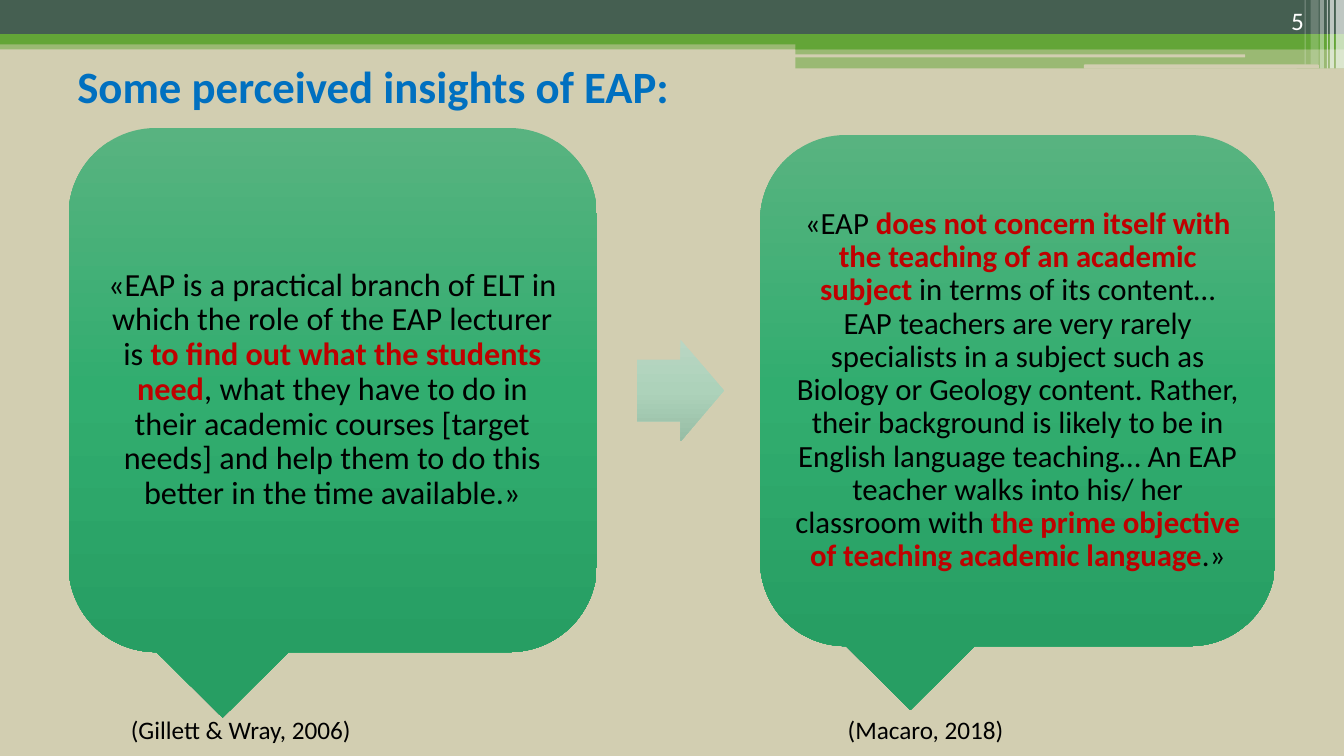
from copy import deepcopy
from dataclasses import dataclass

from lxml.etree import SubElement
from pptx import Presentation
from pptx.dml.color import RGBColor
from pptx.enum.shapes import MSO_SHAPE
from pptx.enum.text import MSO_ANCHOR, MSO_AUTO_SIZE, PP_ALIGN
from pptx.oxml.ns import qn
from pptx.util import Inches, Pt


@dataclass(frozen=True)
class Theme:
    font: str = "Calibri"
    sand: str = "D2CEB1"
    slate: str = "455F51"
    green: str = "63A537"
    white: str = "FFFFFF"
    blue: str = "0070C0"
    black: str = "000000"
    red: str = "C00000"
    callout: tuple = ("58B380", "31AD6F", "279E63")
    arrow: tuple = ("B9D6C3", "ADD2BA", "97BDA5")
    title_size: int = 32
    note_size: int = 18


@dataclass(frozen=True)
class Box:
    x: float
    y: float
    w: float
    h: float

    def share(self, x, y, w, h):
        return Box(self.x + self.w * x / 100, self.y + self.h * y / 100,
                   self.w * w / 100, self.h * h / 100)

    def emu(self):
        return [Inches(v) for v in (self.x, self.y, self.w, self.h)]


T = Theme()
PAGE = Box(0, 0, 13.33, 7.5)


def style(r, size, color, bold=False):
    r.font.name = T.font
    r.font.size = Pt(size)
    r.font.bold = bold
    r.font.color.rgb = RGBColor.from_string(color)


def add_block(s, box, kind=MSO_SHAPE.RECTANGLE):
    sp = s.shapes.add_shape(kind, *box.emu())
    sp.shadow.inherit = False
    sp.line.fill.background()
    return sp


def fill_solid(sp, color, alpha=100):
    sp.fill.solid()
    sp.fill.fore_color.rgb = RGBColor.from_string(color)
    if alpha < 100:
        clr = sp.element.spPr.find(qn("a:solidFill")).find(qn("a:srgbClr"))
        SubElement(clr, qn("a:alpha")).set("val", str(alpha * 1000))


def fill_gradient(sp, colors):
    sp.fill.gradient()
    sp.fill.gradient_angle = 270
    stops = sp.element.spPr.find(qn("a:gradFill")).find(qn("a:gsLst"))
    stops.append(deepcopy(stops[0]))
    for i, (stop, color) in enumerate(zip(sp.fill.gradient_stops, colors)):
        stop.position = i / 2
        stop.color.rgb = RGBColor.from_string(color)


def add_note(s, box, text, color):
    tf = s.shapes.add_textbox(*box.emu()).text_frame
    tf.word_wrap = True
    p = tf.paragraphs[0]
    p.text = text
    style(p.runs[0], T.note_size, color)
    return tf


def add_header(s, box, number):
    bands = [
        (0, 58.8, 100, 13.2, T.green, 50),
        (0, 0, 100, 50, T.slate, 100),
        (0, 50, 100, 14.7, T.green, 100),
        (59.19, 57.35, 40.81, 14.7, T.green, 100),
        (59.19, 70.6, 40.81, 29.4, T.green, 50),
    ]
    for x, y, w, h, color, alpha in bands:
        fill_solid(add_block(s, box.share(x, y, w, h)), color, alpha)
    for rule in [(59.11, 79.4, 33.53, 4.4), (80.65, 94.1, 17.48, 5.9)]:
        fill_solid(add_block(s, box.share(*rule), MSO_SHAPE.ROUNDED_RECTANGLE), T.sand)
    stripes = [
        (99.4, 0.6, 100, 65), (98.95, 0.3, 100, 65), (98.72, 0.08, 100, 60),
        (98.2, 0.3, 100, 40), (97.52, 0.6, 94, 20), (97.07, 0.08, 94, 30),
    ]
    for x, w, h, alpha in stripes:
        fill_solid(add_block(s, box.share(x, 0, w, h)), T.white, alpha)
    tf = add_note(s, box.share(89.42, 0, 8.33, 58.8), number, T.white)
    tf.vertical_anchor = MSO_ANCHOR.BOTTOM
    tf.paragraphs[0].alignment = PP_ALIGN.RIGHT
    tf.paragraphs[0].space_after = Pt(6)


def add_title(s, box, text):
    title = s.shapes.title
    title.left, title.top, title.width, title.height = box.emu()
    tf = title.text_frame
    tf.text = text
    tf.auto_size = MSO_AUTO_SIZE.NONE
    tf.vertical_anchor = MSO_ANCHOR.MIDDLE
    p = tf.paragraphs[0]
    p.alignment = PP_ALIGN.LEFT
    p.line_spacing = 0.9
    style(p.runs[0], T.title_size, T.blue, True)


def add_quote(s, box, size, inset, pieces, source, source_box):
    sp = add_block(s, box, MSO_SHAPE.ROUNDED_RECTANGULAR_CALLOUT)
    fill_gradient(sp, T.callout)
    tf = sp.text_frame
    tf.word_wrap = True
    tf.vertical_anchor = MSO_ANCHOR.MIDDLE
    tf.margin_left = tf.margin_right = tf.margin_top = tf.margin_bottom = Inches(inset)
    p = tf.paragraphs[0]
    p.alignment = PP_ALIGN.CENTER
    p.line_spacing = 0.9
    for i, piece in enumerate(pieces):
        r = p.add_run()
        r.text = piece
        key = i % 2 == 1
        style(r, size, T.red if key else T.black, key)
    add_note(s, box.share(*source_box), source, T.black)


def add_arrow(s, box):
    sp = add_block(s, box, MSO_SHAPE.RIGHT_ARROW)
    sp.adjustments[0] = 0.6
    fill_gradient(sp, T.arrow)


def main():
    prs = Presentation()
    prs.slide_width, prs.slide_height = Inches(PAGE.w), Inches(PAGE.h)
    s = prs.slides.add_slide(prs.slide_layouts[5])
    s.background.fill.solid()
    s.background.fill.fore_color.rgb = RGBColor.from_string(T.sand)

    add_header(s, PAGE.share(0, 0, 100, 9.07), "5")
    add_title(s, PAGE.share(5, 8, 90, 7.5), "Some perceived insights of EAP:")
    add_quote(s, PAGE.share(5.1, 16.93, 39.31, 69.33), 23, 0.1, [
        "«EAP is a practical branch of ELT in which the role of the EAP lecturer is ",
        "to find out what the students need",
        ", what they have to do in their academic courses [target needs] "
        "and help them to do this better in the time available.»",
    ], "(Gillett & Wray, 2006)", (9.92, 110.96, 70.8, 7.69))
    add_arrow(s, PAGE.share(47.41, 44.93, 6.45, 13.47))
    add_quote(s, PAGE.share(56.56, 17.87, 38.33, 67.6), 22, 0.09, [
        "«EAP ",
        "does not concern itself with the teaching of an academic subject ",
        "in terms of its content… EAP teachers are very rarely specialists in a "
        "subject such as Biology or Geology content. Rather, their background is "
        "likely to be in English language teaching… An EAP teacher walks into "
        "his/ her classroom with ",
        "the prime objective of teaching academic language",
        ".»",
    ], "(Macaro, 2018)", (15.07, 112.43, 60.86, 7.89))
    prs.save("out.pptx")


if __name__ == "__main__":
    main()
